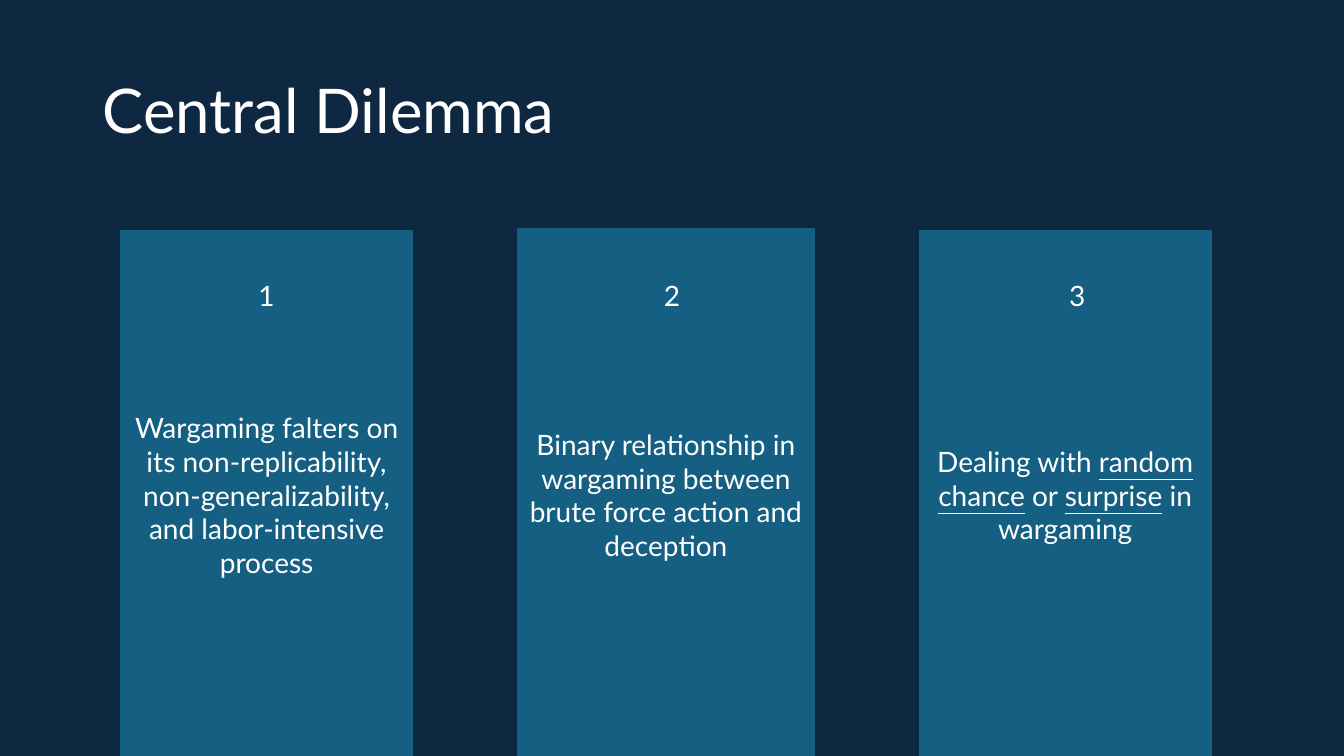
from pptx import Presentation
from pptx.dml.color import RGBColor
from pptx.enum.shapes import MSO_SHAPE
from pptx.enum.text import MSO_ANCHOR, PP_ALIGN
from pptx.util import Inches, Pt

COLORS = {"background": "0E2841", "card": "156082", "edge": "092A39", "text": "FFFFFF"}
FONT = "Lato"
CARDS = [
    ("edge", ["Wargaming falters on its non-replicability, "
              "non-generalizability, and labor-intensive process"]),
    ("card", ["Binary relationship in wargaming between brute force action and deception"]),
    ("edge", ["Dealing with ", "random chance", " or ", "surprise", " in wargaming"]),
]


def rgb(name):
    """Return the named colour."""
    return RGBColor.from_string(COLORS[name])


def write_text(sp, parts, size=20, align=PP_ALIGN.CENTER, anchor=MSO_ANCHOR.MIDDLE, spacing=None):
    """Write one paragraph, underlining every second part."""
    tf = sp.text_frame
    tf.word_wrap = True
    tf.vertical_anchor = anchor
    p = tf.paragraphs[0]
    p.alignment = align
    p.line_spacing = spacing
    for i, part in enumerate(parts):
        r = p.add_run()
        r.text = part
        r.font.name = FONT
        r.font.size = Pt(size)
        r.font.color.rgb = rgb("text")
        r.font.underline = i % 2 == 1


def add_label(s, parts, left, top, width, height, **text_format):
    """Add a text box."""
    sp = s.shapes.add_textbox(Inches(left), Inches(top), Inches(width), Inches(height))
    write_text(sp, parts, **text_format)


def add_card(s, parts, left, edge):
    """Add a tall card with centred text."""
    sp = s.shapes.add_shape(MSO_SHAPE.RECTANGLE, Inches(left), Inches(2.27),
                            Inches(2.93), Inches(5.28))
    sp.shadow.inherit = False
    sp.fill.solid()
    sp.fill.fore_color.rgb = rgb("card")
    sp.line.color.rgb = rgb(edge)
    sp.line.width = Pt(1.5)
    write_text(sp, parts)


def main():
    """Build and save the slide."""
    prs = Presentation()
    prs.slide_width, prs.slide_height = Inches(13.33), Inches(7.5)
    s = prs.slides.add_slide(prs.slide_layouts[6])
    s.background.fill.solid()
    s.background.fill.fore_color.rgb = rgb("background")
    add_label(s, ["Central Dilemma"], 0.92, 0.4, 11.5, 1.45,
              size=44, align=PP_ALIGN.LEFT, spacing=0.9)
    for i, (edge, parts) in enumerate(CARDS):
        add_card(s, parts, 1.18 + 3.96 * i, edge)
        add_label(s, [str(i + 1)], 2.18 + 4.02 * i, 2.71, 0.93, 0.44, anchor=MSO_ANCHOR.TOP)
    prs.save("out.pptx")


if __name__ == "__main__":
    main()
